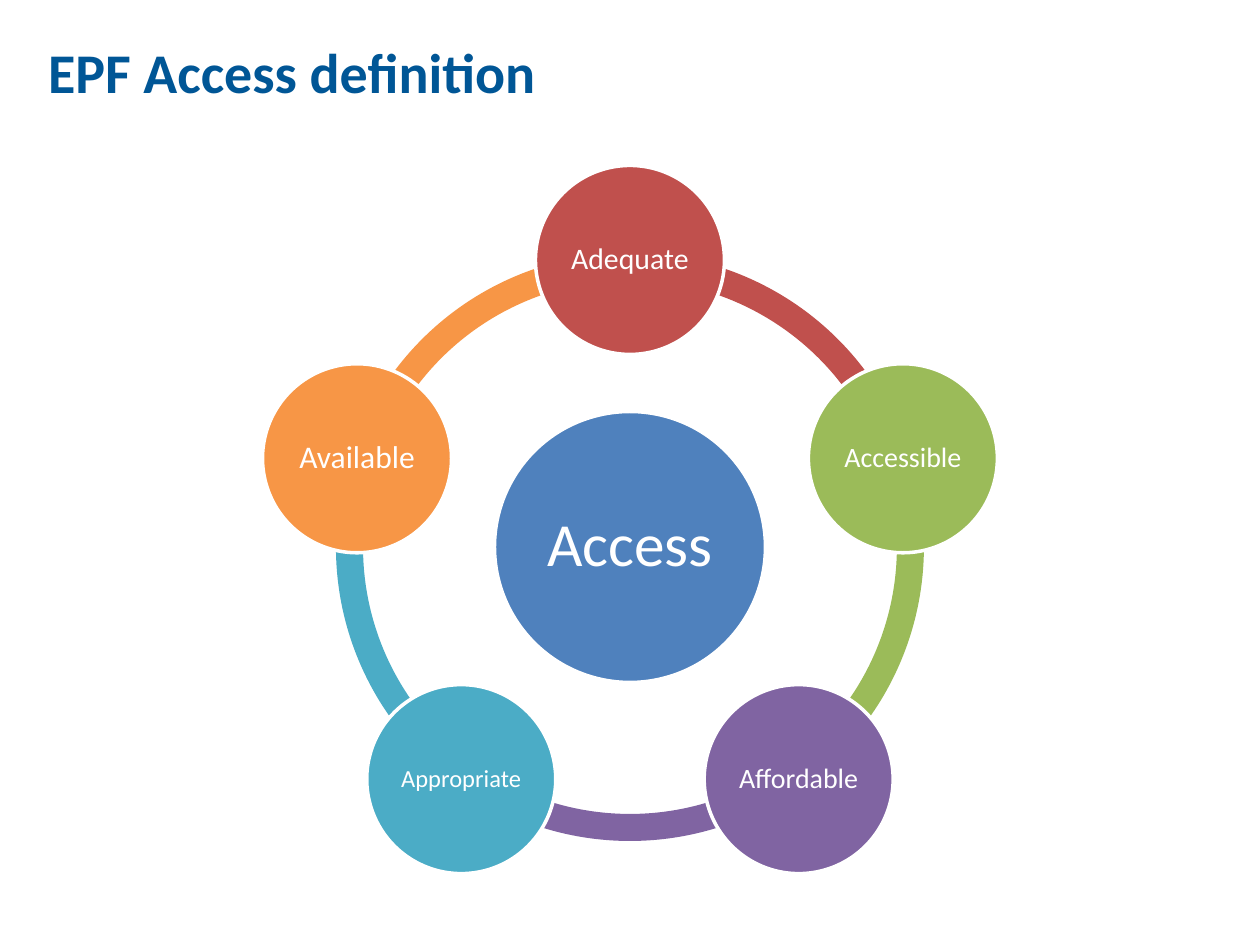
import math
from dataclasses import dataclass

import pptx
import pptx.dml.color
import pptx.enum.shapes
import pptx.enum.text
import pptx.util

PX = 914400 / 126
FONT = "Calibri"
COLOURS = {
    "title": "005696", "white": "FFFFFF", "blue": "4F81BD", "red": "C0504D",
    "green": "9BBB59", "purple": "8064A2", "teal": "4BACC6", "orange": "F79646",
}
CENTRE_X, CENTRE_Y = 630, 547
ORBIT, RING, NODE, CORE = 287, 588, 189, 271
RING_THICKNESS = 0.046


@dataclass
class Circle:
    label: str
    colour: str
    size: int


ACCESS = Circle("Access", "blue", 35)
CRITERIA = [
    Circle("Adequate", "red", 17),
    Circle("Accessible", "green", 16),
    Circle("Affordable", "purple", 16),
    Circle("Appropriate", "teal", 14),
    Circle("Available", "orange", 18),
]
STEP = 360 / len(CRITERIA)


def px(length: float) -> int:
    return round(length * PX)


def rgb(name: str) -> pptx.dml.color.RGBColor:
    return pptx.dml.color.RGBColor.from_string(COLOURS[name])


def write(shape, text: str, *, size: int, colour: str, bold: bool = False,
          align=pptx.enum.text.PP_ALIGN.CENTER, spacing: float = 0.9,
          inset_x: int = 3, inset_y: int = 3) -> None:
    frame = shape.text_frame
    frame.word_wrap = True
    frame.auto_size = pptx.enum.text.MSO_AUTO_SIZE.NONE
    frame.vertical_anchor = pptx.enum.text.MSO_ANCHOR.MIDDLE
    frame.margin_left = frame.margin_right = px(inset_x)
    frame.margin_top = frame.margin_bottom = px(inset_y)
    frame.text = text
    paragraph = frame.paragraphs[0]
    paragraph.alignment = align
    paragraph.line_spacing = spacing
    font = paragraph.runs[0].font
    font.name, font.size, font.bold = FONT, pptx.util.Pt(size), bold
    font.color.rgb = rgb(colour)


def add_round(slide, kind, x: float, y: float, diameter: int, colour: str):
    """Add a filled shape centred on x, y."""
    shape = slide.shapes.add_shape(kind, px(x - diameter / 2), px(y - diameter / 2),
                                   px(diameter), px(diameter))
    shape.shadow.inherit = False
    shape.fill.solid()
    shape.fill.fore_color.rgb = rgb(colour)
    shape.line.fill.background()
    return shape


def add_arc(slide, start: float, colour: str) -> None:
    arc = add_round(slide, pptx.enum.shapes.MSO_SHAPE.BLOCK_ARC,
                    CENTRE_X, CENTRE_Y, RING, colour)
    # Angles are stored in 60000ths of a degree, scaled by 100000
    arc.adjustments[0] = start % 360 * 0.6
    arc.adjustments[1] = (start + STEP) % 360 * 0.6
    arc.adjustments[2] = RING_THICKNESS


def add_circle(slide, circle: Circle, x: float, y: float, diameter: int,
               inset: int = 3) -> None:
    disc = add_round(slide, pptx.enum.shapes.MSO_SHAPE.OVAL, x, y, diameter, circle.colour)
    disc.line.color.rgb = rgb("white")
    disc.line.width = pptx.util.Pt(2)
    write(disc, circle.label, size=circle.size, colour="white",
          inset_x=inset, inset_y=inset)


def main() -> None:
    deck = pptx.Presentation()
    deck.slide_width, deck.slide_height = px(1260), px(945)
    slide = deck.slides.add_slide(deck.slide_layouts[5])

    # Title
    title = slide.shapes.title
    title.left, title.top, title.width, title.height = px(35), px(26), px(953), px(90)
    write(title, "EPF Access definition", size=32, colour="title", bold=True,
          align=pptx.enum.text.PP_ALIGN.LEFT, spacing=1, inset_x=13, inset_y=6)

    # Ring: each arc runs clockwise from its criterion to the next
    angles = [270 + STEP * i for i in range(len(CRITERIA))]
    for criterion, angle in reversed(list(zip(CRITERIA, angles))):
        add_arc(slide, angle, criterion.colour)

    # Core and the criteria around it
    add_circle(slide, ACCESS, CENTRE_X, CENTRE_Y, CORE, inset=6)
    for criterion, angle in zip(CRITERIA, angles):
        turn = math.radians(angle)
        add_circle(slide, criterion, CENTRE_X + ORBIT * math.cos(turn),
                   CENTRE_Y + ORBIT * math.sin(turn), NODE)

    deck.save("out.pptx")


if __name__ == "__main__":
    main()
